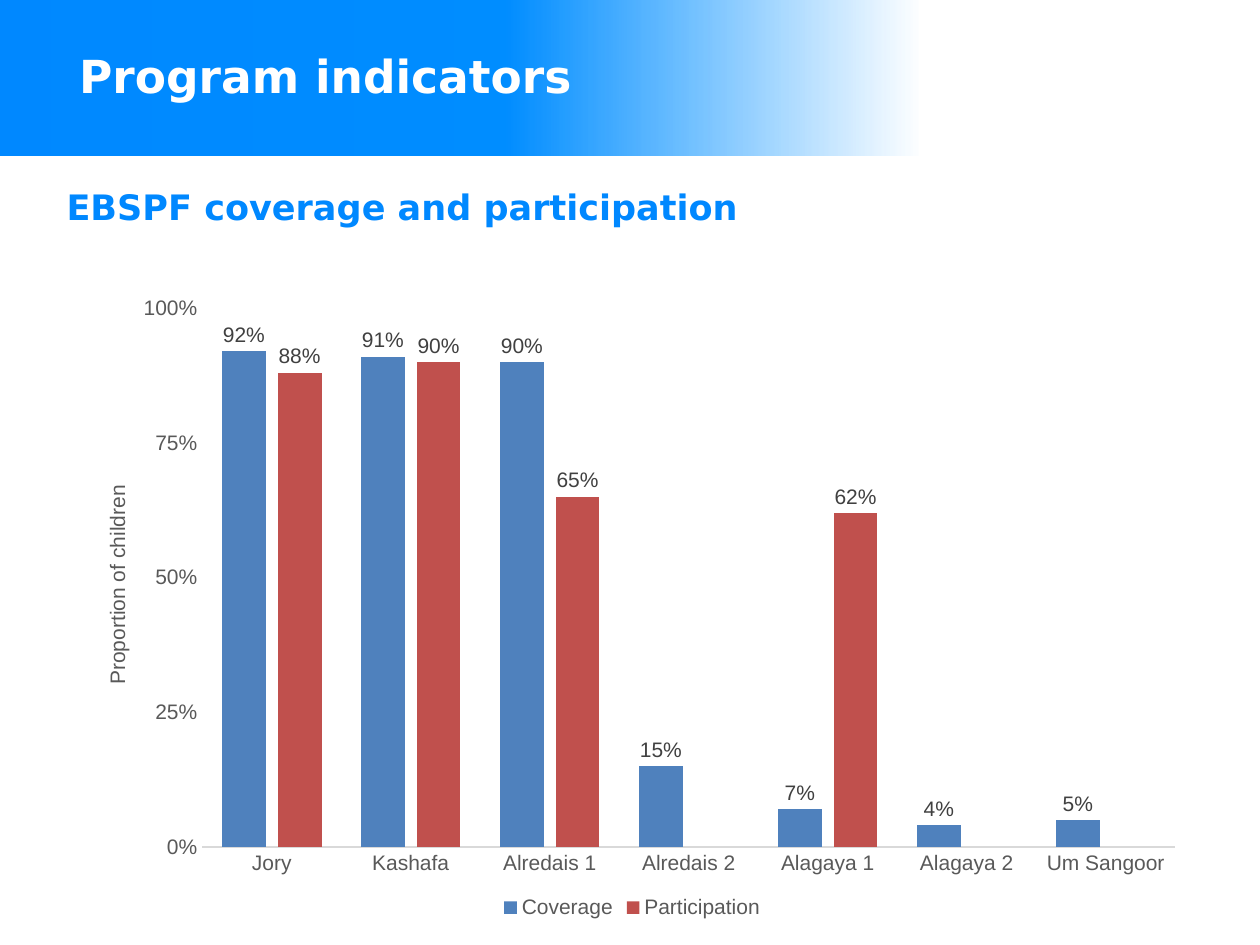
from lxml import etree
from pptx import Presentation
from pptx.chart.data import CategoryChartData
from pptx.dml.color import RGBColor
from pptx.enum.chart import XL_CHART_TYPE, XL_LABEL_POSITION, XL_LEGEND_POSITION, XL_TICK_MARK
from pptx.enum.shapes import MSO_SHAPE
from pptx.enum.text import MSO_ANCHOR, MSO_AUTO_SIZE, PP_ALIGN
from pptx.oxml import parse_xml
from pptx.oxml.ns import nsdecls, qn
from pptx.util import Pt

CLUSTERED = XL_CHART_TYPE.COLUMN_CLUSTERED
OUTSIDE = XL_LABEL_POSITION.OUTSIDE_END
BOTTOM = XL_LEGEND_POSITION.BOTTOM
NO_TICK = XL_TICK_MARK.NONE
RECT = MSO_SHAPE.RECTANGLE
TOP, MIDDLE = MSO_ANCHOR.TOP, MSO_ANCHOR.MIDDLE
LEFT = PP_ALIGN.LEFT
NO_FIT = MSO_AUTO_SIZE.NONE

COLORS = {
    "blue": "0088FF", "blue_mid": "008DFF", "blue_end": "0091FF",
    "white": "FFFFFF", "axis": "595959", "line": "D9D9D9", "label": "404040",
    "Coverage": "4F81BD", "Participation": "C0504D",
}
SITES = ["Jory", "Kashafa", "Alredais 1", "Alredais 2", "Alagaya 1", "Alagaya 2", "Um Sangoor"]
SERIES = {
    "Coverage": [0.92, 0.91, 0.9, 0.15, 0.07, 0.04, 0.05],
    "Participation": [0.88, 0.9, 0.65, None, 0.62, None, None],
}


def rgb(name):
    """Return the named palette colour."""
    return RGBColor.from_string(COLORS[name])


def style_font(font, size, color, name="Arial", bold=False):
    """Apply face, size, colour and weight to a font."""
    font.name, font.size, font.bold = name, Pt(size), bold
    font.color.rgb = rgb(color)


def add_band(s, x, y, w, h):
    """Draw the header band that fades out to the right, behind everything."""
    sp = s.shapes.add_shape(RECT, Pt(x), Pt(y), Pt(w), Pt(h))
    sp.shadow.inherit = False
    sp.line.fill.background()
    sp.fill.gradient()
    sp.fill.gradient_angle = 0
    stops = sp._element.spPr.find(qn("a:gradFill")).find(qn("a:gsLst"))
    for stop in list(stops):
        stops.remove(stop)
    for pos, color, alpha in ((0, "blue", 100), (40, "blue_mid", 100), (73, "blue_end", 0)):
        stops.append(parse_xml(
            f'<a:gs {nsdecls("a")} pos="{pos * 1000}"><a:srgbClr val="{COLORS[color]}">'
            f'<a:alpha val="{alpha * 1000}"/></a:srgbClr></a:gs>'))
    s.shapes._spTree.insert(2, sp._element)


def fill_placeholder(sp, box, text, size, color, anchor, margins):
    """Place a placeholder in its box and set its one line of bold text."""
    sp.left, sp.top, sp.width, sp.height = (Pt(v) for v in box)
    tf = sp.text_frame
    tf.text = text
    tf.word_wrap, tf.auto_size, tf.vertical_anchor = True, NO_FIT, anchor
    tf.margin_left, tf.margin_top, tf.margin_right, tf.margin_bottom = (Pt(v) for v in margins)
    p = tf.paragraphs[0]
    p.alignment, p.space_before = LEFT, Pt(0)
    pPr = p._p.get_or_add_pPr()
    pPr.set("marL", "0")
    pPr.set("indent", "0")
    etree.SubElement(pPr, qn("a:buNone"))
    style_font(p.runs[0].font, size, color, "DejaVu Sans", True)


def set_layout(parent, index, target="", **fractions):
    """Fix the position of a chart part as fractions of the chart."""
    for old in parent.findall(qn("c:layout")):
        parent.remove(old)
    layout = etree.Element(qn("c:layout"))
    manual = etree.SubElement(layout, qn("c:manualLayout"))
    if target:
        etree.SubElement(manual, qn("c:layoutTarget")).set("val", target)
    for key in "xy":
        etree.SubElement(manual, qn(f"c:{key}Mode")).set("val", "edge")
    for key, value in fractions.items():
        etree.SubElement(manual, qn(f"c:{key}")).set("val", str(value))
    parent.insert(index, layout)


def format_value_axis(axis):
    """Format the percentage axis and its rotated title."""
    axis.minimum_scale, axis.maximum_scale, axis.major_unit = 0, 1, 0.25
    axis.has_major_gridlines = False
    axis.format.line.fill.background()
    axis.tick_labels.number_format = "0%"
    axis.tick_labels.number_format_is_linked = False
    title = axis.axis_title
    tf = title.text_frame
    tf.text = "Proportion of children"
    style_font(tf.paragraphs[0].runs[0].font, 12, "axis")
    body = tf._txBody.find(qn("a:bodyPr"))
    body.set("rot", "-5400000")
    body.set("vert", "horz")
    set_layout(title._element, 1, x=0.03, y=0.31)


def add_coverage_chart(s, x, y, w, h):
    """Add the clustered columns of coverage and participation by site."""
    data = CategoryChartData(number_format="0%")
    data.categories = SITES
    for name, values in SERIES.items():
        data.add_series(name, values)
    chart = s.shapes.add_chart(CLUSTERED, Pt(x), Pt(y), Pt(w), Pt(h), data).chart
    chart.has_title = False
    style_font(chart.font, 12, "axis")
    chart.has_legend = True
    chart.legend.position = BOTTOM
    chart.legend.include_in_layout = False
    style_font(chart.legend.font, 12, "axis")
    for axis in (chart.category_axis, chart.value_axis):
        axis.major_tick_mark = axis.minor_tick_mark = NO_TICK
        style_font(axis.tick_labels.font, 12, "axis")
    line = chart.category_axis.format.line
    line.color.rgb, line.width = rgb("line"), Pt(0.75)
    format_value_axis(chart.value_axis)

    plot = chart.plots[0]
    plot.gap_width, plot.overlap, plot.vary_by_categories = 90, -27, False
    for series in plot.series:
        series.format.fill.solid()
        series.format.fill.fore_color.rgb = rgb(series.name)
        series.invert_if_negative = False
        labels = series.data_labels
        labels.show_value, labels.position = True, OUTSIDE
        labels.number_format, labels.number_format_is_linked = "0%", False
        style_font(labels.font, 12, "label")
    area = chart._chartSpace.chart.plotArea
    set_layout(area, 0, "inner", x=0.12, y=0.04, w=0.86, h=0.84)


def main():
    """Build the slide and save it."""
    prs = Presentation()
    prs.slide_width, prs.slide_height = Pt(720), Pt(540)
    s = prs.slides.add_slide(prs.slide_layouts[1])
    add_band(s, 0, 0, 720, 88.8)
    fill_placeholder(s.shapes.title, (38, 9.5, 466.5, 72.5), "Program indicators",
                     26, "white", MIDDLE, (7.2, 0, 7.2, 5))
    fill_placeholder(s.placeholders[1], (38, 106, 646.5, 33), "EBSPF coverage and participation",
                     20, "blue", TOP, (0, 0, 0, 0))
    add_coverage_chart(s, 38, 161.5, 646.5, 366.5)
    prs.save("out.pptx")


if __name__ == "__main__":
    main()
